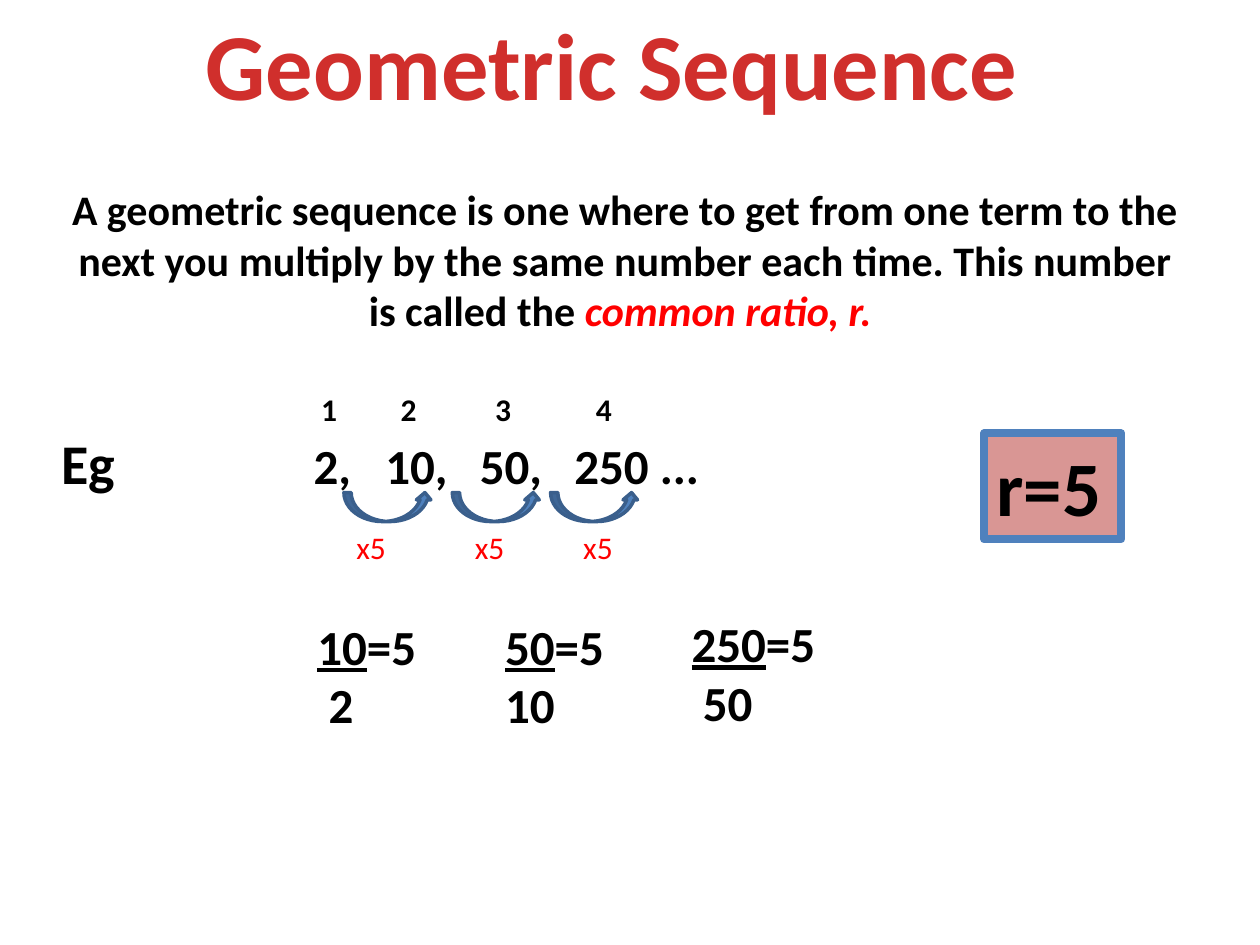
from dataclasses import dataclass

from lxml import etree
from pptx import Presentation
from pptx import util as u
from pptx.dml.color import RGBColor
from pptx.enum import shapes, text
from pptx.oxml.ns import qn

COLORS = {
    "title": "D02F2C", "ink": "000000", "accent": "FF0000",
    "blue": "4F81BD", "blue_edge": "3A5F8C", "pink": "D99694",
}
FONT = "Calibri"
COLS, ROWS = 100, 75  # slide grid

prs = Presentation()
prs.slide_width, prs.slide_height = u.Inches(10), u.Inches(7.5)
s = prs.slides.add_slide(prs.slide_layouts[6])


@dataclass
class Box:
    """A place on the slide, in grid columns and rows."""
    col: float
    row: float
    width: float
    height: float

    def emu(self) -> list[int]:
        w, h = prs.slide_width / COLS, prs.slide_height / ROWS
        return [round(v) for v in (self.col * w, self.row * h, self.width * w, self.height * h)]


@dataclass
class Run:
    text: str
    size: float
    color: str = "ink"
    bold: bool = True
    italic: bool = False
    underline: bool = False


@dataclass
class Step:
    """One multiplication between neighbouring terms."""
    arrow_col: float
    label_col: float


@dataclass
class Ratio:
    box: Box
    top: str
    bottom: str
    indent: float


def rgb(name: str) -> RGBColor:
    return RGBColor.from_string(COLORS[name])


def write(tf, paragraphs: list[list[Run]], align=text.PP_ALIGN.LEFT) -> None:
    for i, runs in enumerate(paragraphs):
        p = tf.add_paragraph() if i else tf.paragraphs[0]
        p.alignment = align
        for run in runs:
            r = p.add_run()
            r.text = run.text
            f = r.font
            f.name, f.size, f.bold = FONT, u.Pt(run.size), run.bold
            f.italic, f.underline = run.italic, run.underline
            f.color.rgb = rgb(run.color)


def add_text(box: Box, paragraphs: list[list[Run]], align=text.PP_ALIGN.LEFT, wrap: bool = True):
    tf = s.shapes.add_textbox(*box.emu()).text_frame
    tf.word_wrap = wrap
    tf.auto_size = text.MSO_AUTO_SIZE.SHAPE_TO_FIT_TEXT
    write(tf, paragraphs, align)
    return tf


def add_shape(kind, box: Box, fill: str, line: str, weight: float):
    sp = s.shapes.add_shape(kind, *box.emu())
    sp.shadow.inherit = False
    sp.fill.solid()
    sp.fill.fore_color.rgb = rgb(fill)
    sp.line.color.rgb = rgb(line)
    sp.line.width = u.Pt(weight)
    return sp


def set_tabs(p, stops: list[float]) -> None:
    """Set left tab stops, in inches."""
    tabs = etree.SubElement(p._p.get_or_add_pPr(), qn("a:tabLst"))
    for stop in stops:
        etree.SubElement(tabs, qn("a:tab"), pos=str(u.Inches(stop)), algn="l")


def add_step(step: Step) -> None:
    add_shape(shapes.MSO_SHAPE.CURVED_UP_ARROW, Box(step.arrow_col, 39.1, 7, 2.3),
              "blue", "blue_edge", 2)
    add_text(Box(step.label_col, 41.4, 4.7, 4), [[Run("x5", 18, "accent", bold=False)]])


def add_ratio(ratio: Ratio) -> None:
    tf = add_text(ratio.box, [
        [Run(ratio.top, 28, underline=True), Run("=5", 28)],
        [Run(ratio.bottom, 28)],
    ])
    tf.paragraphs[1]._p.get_or_add_pPr().set("marL", str(u.Inches(ratio.indent)))


CENTER = text.PP_ALIGN.CENTER
add_text(Box(15, 0, 67.1, 19.2), [[Run("Geometric Sequence", 54, "title")]], CENTER, wrap=False)
add_text(Box(3.9, 14.1, 91.4, 13.1), [[
    Run("A geometric sequence is one where to get from one term to the next you multiply "
        "by the same number each time. This number is called the ", 24),
    Run("common ratio, r. ", 24, "accent", italic=True),
]], CENTER)

terms = add_text(Box(3.9, 30.5, 89.8, 9.4), [
    [Run("\t1\t2\t3\t4", 18)],
    [Run("Eg", 32), Run("\t2,\t10,\t50,\t250 ...", 28)],
])
set_tabs(terms.paragraphs[0], [2.06, 2.69, 3.44, 4.24])
set_tabs(terms.paragraphs[1], [2, 2.57, 3.32, 4.07])

for step in (Step(27.3, 27.3), Step(35.9, 36.7), Step(43.7, 45.3)):
    add_step(step)

for ratio in (
    Ratio(Box(24.2, 48.4, 10.2, 10.4), "10", "2", 0.09),
    Ratio(Box(39.1, 48.4, 10.2, 10.4), "50", "10", 0),
    Ratio(Box(53.9, 48.2, 14.8, 10.4), "250", "50", 0.09),
):
    add_ratio(ratio)

answer = add_shape(shapes.MSO_SHAPE.RECTANGLE, Box(78.1, 34.4, 10.9, 8.4), "pink", "blue", 4.5)
answer.text_frame.word_wrap = True
answer.text_frame.vertical_anchor = text.MSO_ANCHOR.TOP
write(answer.text_frame, [[Run("r=5", 44)]])

prs.save("out.pptx")
